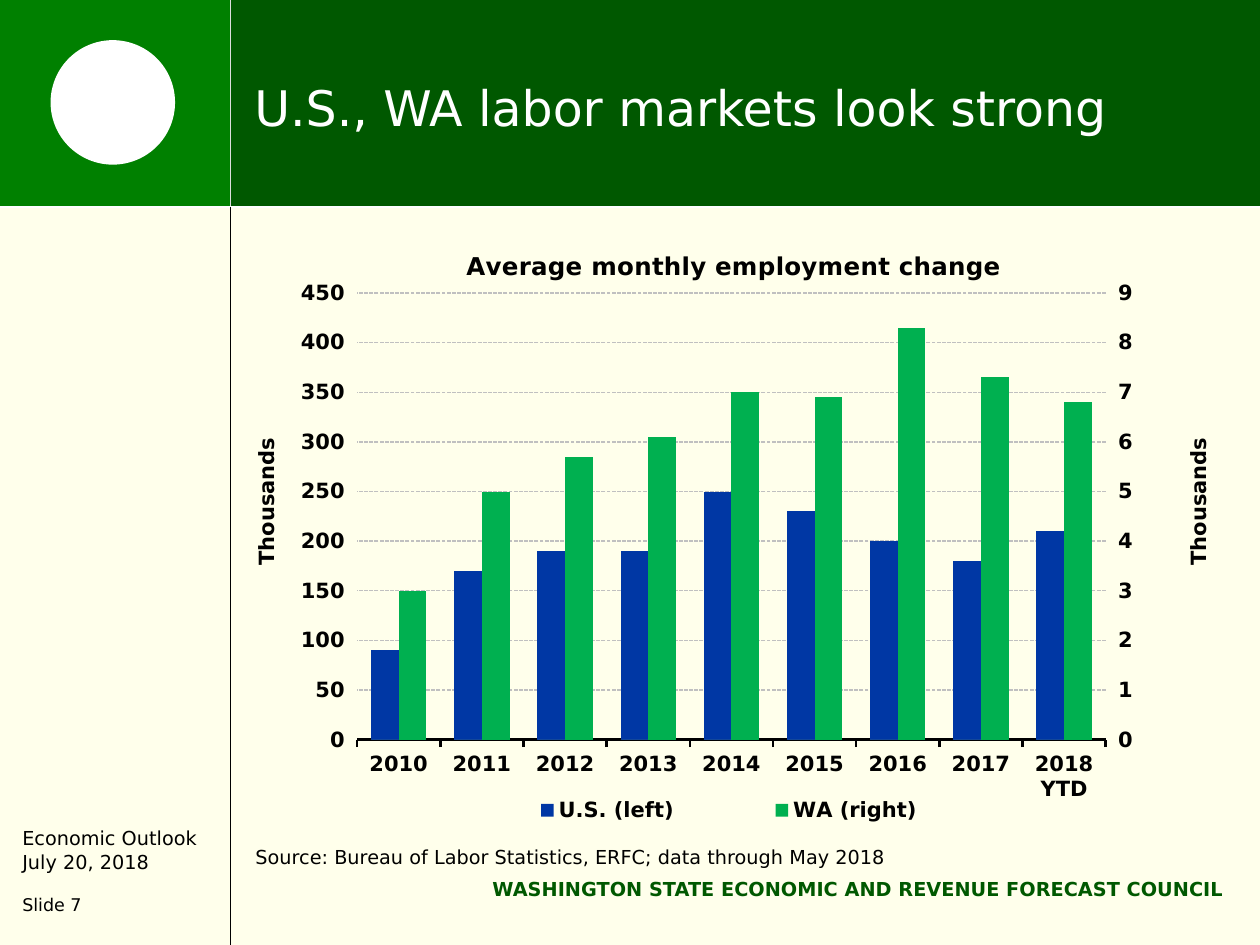
from copy import deepcopy

from lxml.etree import SubElement
from pptx import Presentation
from pptx.chart.data import CategoryChartData
from pptx.dml.color import RGBColor
from pptx.enum.chart import XL_CHART_TYPE, XL_LEGEND_POSITION, XL_TICK_MARK
from pptx.enum.dml import MSO_LINE
from pptx.enum.shapes import MSO_CONNECTOR, MSO_SHAPE
from pptx.enum.text import MSO_ANCHOR, PP_ALIGN
from pptx.oxml import parse_xml
from pptx.oxml.ns import nsdecls, qn
from pptx.util import Cm, Pt

FONT = "DejaVu Sans"
WIDTH, HEIGHT = 25.4, 19.05
SIDEBAR, HEADER = 4.65, 4.17


def color(code):
    return RGBColor.from_string(code)


def layout(**values):
    """Manual chart layout; values are fractions of the chart area."""
    items = "".join(f'<c:{key} val="{value}"/>' for key, value in values.items())
    return parse_xml(f'<c:layout {nsdecls("c")}><c:manualLayout>{items}'
                     '</c:manualLayout></c:layout>')


deck = Presentation()
deck.slide_width, deck.slide_height = Cm(WIDTH), Cm(HEIGHT)
page = deck.slides.add_slide(deck.slide_layouts[6])
page.background.fill.solid()
page.background.fill.fore_color.rgb = color("FFFFEB")

# Header blocks and emblem disc
for kind, left, top, width, height, fill in [
    (MSO_SHAPE.RECTANGLE, SIDEBAR, 0, WIDTH - SIDEBAR, HEADER, "005800"),
    (MSO_SHAPE.RECTANGLE, 0, 0, SIDEBAR, HEADER, "008000"),
    (MSO_SHAPE.OVAL, 1.02, 0.81, 2.51, 2.51, "FFFFFF"),
]:
    shape = page.shapes.add_shape(kind, Cm(left), Cm(top), Cm(width), Cm(height))
    shape.shadow.inherit = False
    shape.fill.solid()
    shape.fill.fore_color.rgb = color(fill)
    shape.line.fill.background()

# Dividing lines
for x1, y1, x2, y2, stroke in [
    (SIDEBAR, 0, SIDEBAR, HEIGHT, "DDDDDD"),
    (0, HEADER, WIDTH, HEADER, "FFFFFF"),
    (SIDEBAR, HEADER, SIDEBAR, HEIGHT, "000000"),
]:
    divider = page.shapes.add_connector(
        MSO_CONNECTOR.STRAIGHT, Cm(x1), Cm(y1), Cm(x2), Cm(y2))
    divider.line.color.rgb = color(stroke)
    divider.line.width = Pt(0.75)
    SubElement(divider._element.spPr, qn("a:effectLst"))

# Text boxes: position, anchor, paragraph format, (text, size, space before)
for (left, top, width, height), anchor, align, bold, ink, lines in [
    ((4.88, 0.36, 19.48, 3.58), MSO_ANCHOR.MIDDLE, PP_ALIGN.LEFT, False, "FFFFFF",
     [("U.S., WA labor markets look strong", 28, 0)]),
    ((0.2, 16.54, 4.6, 2.06), MSO_ANCHOR.TOP, PP_ALIGN.LEFT, False, "000000",
     [("Economic Outlook", 11, 0), ("July 20, 2018", 11, 0), ("Slide 7", 10, 12)]),
    ((4.9, 16.92, 20.4, 0.74), MSO_ANCHOR.TOP, PP_ALIGN.LEFT, False, "000000",
     [("Source: Bureau of Labor Statistics, ERFC; data through May 2018", 11, 0)]),
    ((9.45, 17.43, 15.47, 0.99), MSO_ANCHOR.MIDDLE, PP_ALIGN.RIGHT, True, "005800",
     [("WASHINGTON STATE ECONOMIC AND REVENUE FORECAST COUNCIL", 11, 0)]),
]:
    box = page.shapes.add_textbox(Cm(left), Cm(top), Cm(width), Cm(height))
    frame = box.text_frame
    frame.word_wrap = True
    frame.vertical_anchor = anchor
    for index, (text, size, before) in enumerate(lines):
        para = frame.add_paragraph() if index else frame.paragraphs[0]
        para.alignment = align
        para.space_before = Pt(before)
        span = para.add_run()
        span.text = text
        span.font.color.rgb = color(ink)
        for name, value in {"name": FONT, "size": Pt(size), "bold": bold}.items():
            setattr(span.font, name, value)

# Column chart; the two zero series hold the bars of each axis side by side
data = CategoryChartData(number_format="0")
data.categories = [str(year) for year in range(2010, 2018)] + ["2018 YTD"]
series_rows = [
    ("U.S. (left)", [90, 170, 190, 190, 250, 230, 200, 180, 210], "0037A4"),
    ("Series 2", [0] * 9, "C0504D"),
    ("Series 3", [0] * 9, "9BBB59"),
    ("WA (right)", [3, 5, 5.7, 6.1, 7, 6.9, 8.3, 7.3, 6.8], "00B050"),
]
for name, values, _ in series_rows:
    data.add_series(name, values)
chart = page.shapes.add_chart(XL_CHART_TYPE.COLUMN_CLUSTERED, Cm(4.8), Cm(4.55),
                              Cm(19.99), Cm(12.34), data).chart
chart.font.color.rgb = color("000000")
for name, value in {"name": FONT, "size": Pt(12), "bold": True}.items():
    setattr(chart.font, name, value)

plot = chart.plots[0]
plot.gap_width, plot.overlap, plot.vary_by_categories = 100, 0, False
for series, (_, _, fill) in zip(plot.series, series_rows):
    series.format.fill.solid()
    series.format.fill.fore_color.rgb = color(fill)
    series.invert_if_negative = False

# Axes
years, left_axis = chart.category_axis, chart.value_axis
years.major_tick_mark = XL_TICK_MARK.OUTSIDE
years.format.line.color.rgb = color("000000")
years.format.line.width = Pt(1.5)
for name, value in {"minimum_scale": 0, "maximum_scale": 450, "major_unit": 50,
                    "major_tick_mark": XL_TICK_MARK.OUTSIDE,
                    "has_major_gridlines": True}.items():
    setattr(left_axis, name, value)
left_axis.tick_labels.number_format = "0"
left_axis.tick_labels.number_format_is_linked = False
left_axis.format.line.fill.background()
grid = left_axis.major_gridlines.format.line
grid.color.rgb = color("C0C0C0")
grid.width = Pt(0.75)
grid.dash_style = MSO_LINE.SQUARE_DOT

# Chart and axis titles
for owner, text, size in [(chart, "Average monthly employment change", 14),
                          (left_axis, "Thousands", 12)]:
    title = owner.chart_title if owner is chart else owner.axis_title
    span = title.text_frame.paragraphs[0].add_run()
    span.text = text
    span.font.color.rgb = color("000000")
    for name, value in {"name": FONT, "size": Pt(size), "bold": True}.items():
        setattr(span.font, name, value)

# Second axis pair: copy the first, then move the last two series to it
area = chart._chartSpace.chart.plotArea
bars, cat_axis, val_axis = (area.find(qn(f"c:{tag}"))
                            for tag in ("barChart", "catAx", "valAx"))
right_bars, right_cat, right_val = map(deepcopy, (bars, cat_axis, val_axis))
for group, unwanted in [(bars, (2, 3)), (right_bars, (0, 1))]:
    rows = group.findall(qn("c:ser"))
    for index in unwanted:
        group.remove(rows[index])
bars.addnext(right_bars)
val_axis.addnext(right_val)
right_val.addnext(right_cat)

for node, number in zip(right_bars.findall(qn("c:axId")), ("5001", "5002")):
    node.set("val", number)
for axis, settings in [
    (right_cat, {"axId": "5001", "crossAx": "5002", "delete": "1"}),
    (right_val, {"axId": "5002", "crossAx": "5001", "axPos": "r", "crosses": "max",
                 "scaling/c:max": "9", "majorUnit": "1"}),
]:
    for tag, value in settings.items():
        axis.find(f"c:{tag}", axis.nsmap).set("val", value)
right_val.remove(right_val.find(qn("c:majorGridlines")))

# Legend without the zero series
chart.has_legend = True
legend = chart.legend
legend.position = XL_LEGEND_POSITION.BOTTOM
legend.include_in_layout = False
spot = legend._element.find(qn("c:legendPos"))
for index in (2, 1):
    spot.addnext(parse_xml(f'<c:legendEntry {nsdecls("c")}><c:idx val="{index}"/>'
                           '<c:delete val="1"/></c:legendEntry>'))

# Manual places of plot, legend and axis titles
for old in area.findall(qn("c:layout")):
    area.remove(old)
area.insert(0, layout(layoutTarget="inner", xMode="edge", yMode="edge",
                      x=0.12, y=0.11, w=0.755, h=0.73))
for old in legend._element.findall(qn("c:layout")):
    legend._element.remove(old)
legend._element.find(qn("c:overlay")).addprevious(
    layout(xMode="edge", yMode="edge", x=0.21, y=0.92, w=0.57, h=0.07))
for axis, x in [(val_axis, 0.01), (right_val, 0.95)]:
    title = axis.find(qn("c:title"))
    for old in title.findall(qn("c:layout")):
        title.remove(old)
    title.find(qn("c:tx")).addnext(layout(xMode="edge", yMode="edge", x=x, y=0.34))
    title.find(".//" + qn("a:bodyPr")).set("rot", "-5400000")

deck.save("out.pptx")
